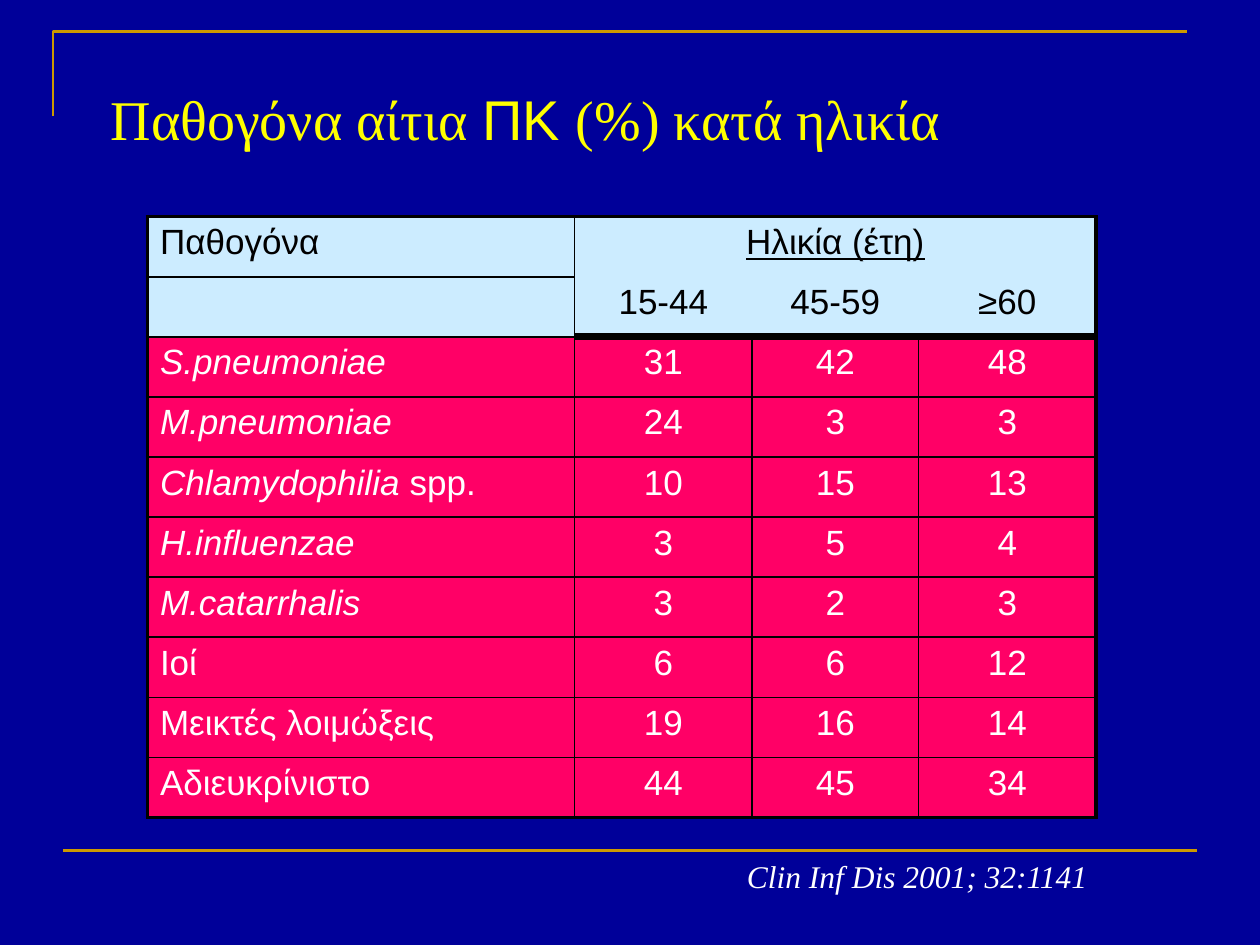
from lxml import etree
from pptx import Presentation
from pptx.dml.color import RGBColor
from pptx.enum.shapes import MSO_CONNECTOR
from pptx.enum.text import PP_ALIGN
from pptx.oxml.ns import qn
from pptx.util import Inches, Pt

STRAIGHT = MSO_CONNECTOR.STRAIGHT
CENTER, LEFT = PP_ALIGN.CENTER, PP_ALIGN.LEFT

NAVY = RGBColor(0x00, 0x00, 0x99)
GOLD = RGBColor(0xCC, 0x99, 0x00)
YELLOW = RGBColor(0xFF, 0xFF, 0x00)
WHITE = RGBColor(0xFF, 0xFF, 0xFF)
BLACK = RGBColor(0x00, 0x00, 0x00)
PALE_BLUE = RGBColor(0xCC, 0xEC, 0xFF)
PINK = RGBColor(0xFF, 0x00, 0x66)

SERIF, SANS = "Times New Roman", "Arial"
THIN, OUTER, HEAVY = 1, 2.25, 4.5

COLUMN_WIDTHS = [3.39, 1.41, 1.32, 1.41]
TABLE_HEIGHT = 4.77
HEADER_ROWS = 2
ROWS = [
    ["Παθογόνα", "Ηλικία (έτη)", "", ""],
    ["", "15-44", "45-59", "≥60"],
    ["S.pneumoniae", "31", "42", "48"],
    ["M.pneumoniae", "24", "3", "3"],
    ["Chlamydophilia spp.", "10", "15", "13"],
    ["H.influenzae", "3", "5", "4"],
    ["M.catarrhalis", "3", "2", "3"],
    ["Ιοί", "6", "6", "12"],
    ["Μεικτές λοιμώξεις", "19", "16", "14"],
    ["Αδιευκρίνιστο", "44", "45", "34"],
]
LATIN_NAMES = {"S.pneumoniae", "M.pneumoniae", "H.influenzae", "M.catarrhalis"}


def write(paragraph, text, font=SANS, size=20, color=BLACK, italic=False,
          underline=False, align=LEFT):
    """Append one formatted run to the paragraph."""
    paragraph.alignment = align
    run = paragraph.add_run()
    run.text = text
    run.font.name = font
    run.font.size = Pt(size)
    run.font.color.rgb = color
    run.font.italic = italic
    run.font.underline = underline


def add_text_box(slide, left, top, width, height):
    """Add a wrapping text box and return its first paragraph."""
    box = slide.shapes.add_textbox(Inches(left), Inches(top), Inches(width), Inches(height))
    box.text_frame.word_wrap = True
    return box.text_frame.paragraphs[0]


def style_rule(line):
    line.color.rgb = GOLD
    line.width = Pt(1.5)


def add_corner_rule(slide):
    builder = slide.shapes.build_freeform(Inches(0.42), Inches(0.92))
    builder.add_line_segments(
        [(Inches(0.42), Inches(0.25)), (Inches(9.42), Inches(0.25))], close=False)
    corner = builder.convert_to_shape()
    corner.shadow.inherit = False
    corner.fill.background()
    style_rule(corner.line)


def add_footer_rule(slide):
    rule = slide.shapes.add_connector(
        STRAIGHT, Inches(0.5), Inches(6.75), Inches(9.5), Inches(6.75))
    etree.SubElement(rule._element.spPr, qn("a:effectLst"))
    style_rule(rule.line)


def horizontal_edge(edge, column):
    """Width of the border above row number edge, 0 for none."""
    if edge in (0, len(ROWS)):
        return OUTER
    if column > 0 and edge <= HEADER_ROWS:
        return HEAVY if edge == HEADER_ROWS else 0
    return THIN


def vertical_edge(edge, row):
    """Width of the border left of column number edge, 0 for none."""
    if edge in (0, len(COLUMN_WIDTHS)):
        return OUTER
    return 0 if row < HEADER_ROWS and edge > 1 else THIN


def set_border(cell, side, width):
    border = etree.SubElement(cell._tc.get_or_add_tcPr(), qn(f"a:ln{side}"), w=str(Pt(width)))
    if width:
        fill = etree.SubElement(border, qn("a:solidFill"))
        etree.SubElement(fill, qn("a:srgbClr"), val=str(BLACK))
    else:
        etree.SubElement(border, qn("a:noFill"))


def style_cell(cell, row, column):
    right = column + (cell.span_width if cell.is_merge_origin else 1)
    set_border(cell, "L", vertical_edge(column, row))
    set_border(cell, "R", vertical_edge(right, row))
    set_border(cell, "T", horizontal_edge(row, column))
    set_border(cell, "B", horizontal_edge(row + 1, column))
    cell.fill.solid()
    cell.fill.fore_color.rgb = PALE_BLUE if row < HEADER_ROWS else PINK


def fill_cell(cell, text, row, column):
    paragraph = cell.text_frame.paragraphs[0]
    color = BLACK if row < HEADER_ROWS else WHITE
    if text.endswith(" spp."):
        write(paragraph, text.removesuffix("spp."), color=color, italic=True)
        write(paragraph, "spp.", color=color)
    elif text:
        write(paragraph, text, color=color, italic=text in LATIN_NAMES,
              underline=row == 0 and column == 1, align=CENTER if column else LEFT)


def add_pathogen_table(slide):
    table = slide.shapes.add_table(
        len(ROWS), len(COLUMN_WIDTHS), Inches(1.17), Inches(1.72),
        Inches(sum(COLUMN_WIDTHS)), Inches(TABLE_HEIGHT)).table
    table.first_row = table.horz_banding = False
    for column, width in zip(table.columns, COLUMN_WIDTHS):
        column.width = Inches(width)
    table.cell(0, 1).merge(table.cell(0, 3))
    for row, texts in enumerate(ROWS):
        for column, text in enumerate(texts):
            cell = table.cell(row, column)
            style_cell(cell, row, column)
            fill_cell(cell, text, row, column)


def main():
    presentation = Presentation()
    presentation.slide_width = Inches(10)
    presentation.slide_height = Inches(7.5)
    slide = presentation.slides.add_slide(presentation.slide_layouts[6])
    slide.background.fill.solid()
    slide.background.fill.fore_color.rgb = NAVY

    add_corner_rule(slide)
    add_footer_rule(slide)
    add_pathogen_table(slide)

    title = add_text_box(slide, 0.78, 0.62, 8.83, 0.63)
    for text, font in [("Παθογόνα αίτια ", SERIF), ("ΠΚ ", SANS), ("(%) κατά ηλικία", SERIF)]:
        write(title, text, font=font, size=32, color=YELLOW)

    citation = add_text_box(slide, 5.83, 6.75, 3.33, 0.4)
    write(citation, "Clin Inf Dis 2001; 32:1141", font=SERIF, size=18, color=WHITE, italic=True)

    presentation.save("out.pptx")


if __name__ == "__main__":
    main()
